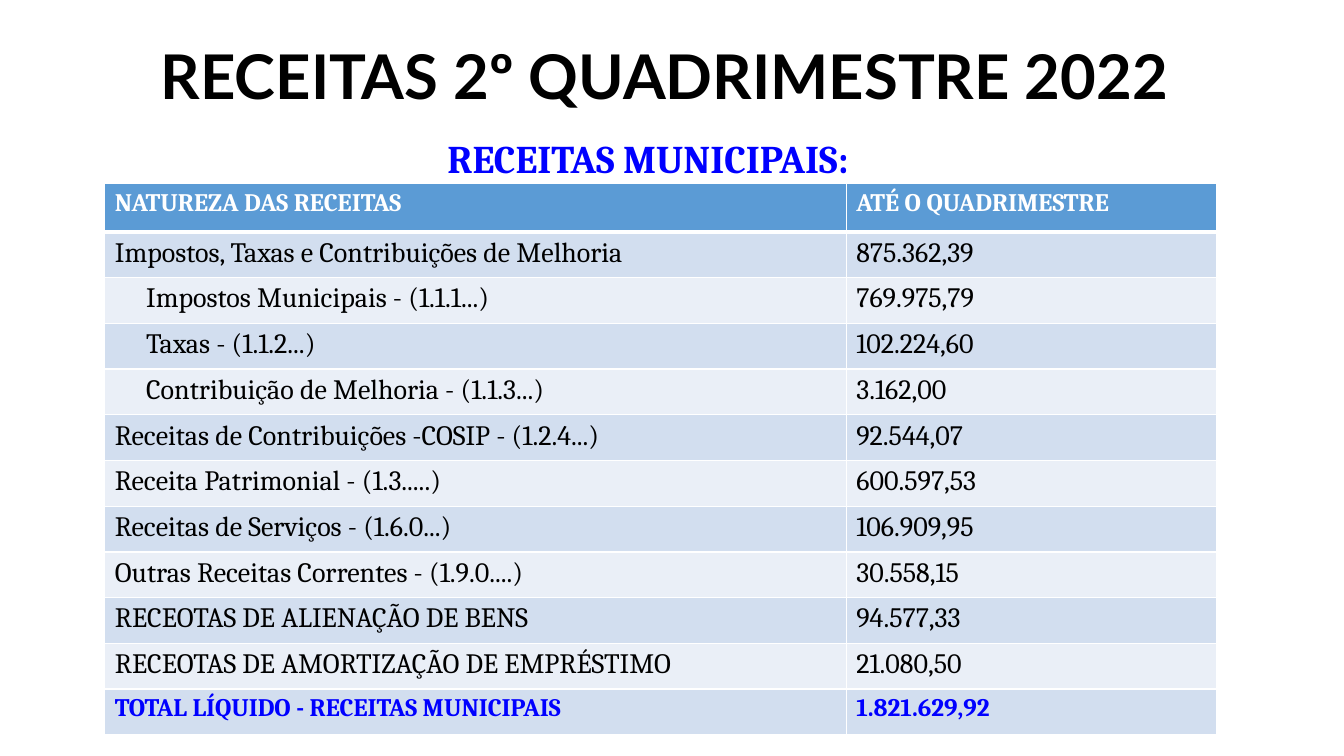
import pptx
import pptx.util
import pptx.dml.color
import pptx.enum.text
import pptx.oxml.ns
import lxml.etree

WIDTH, HEIGHT = pptx.util.Inches(13.33), pptx.util.Inches(7.5)
COLUMN, ROW = WIDTH / 100, HEIGHT / 100
WHITE, BLACK, BLUE = "FFFFFF", "000000", "0000FF"
HEADER_FILL, BANDS = "5B9BD5", ("D2DEEF", "EAEFF7")

TITLE = {"name": "Lato", "size": pptx.util.Pt(44), "bold": True}
SUBTITLE = {"name": "Cambria", "size": pptx.util.Pt(28), "bold": True}
STRONG = {"name": "Cambria", "size": pptx.util.Pt(18), "bold": True}
PLAIN = {"name": "Cambria", "size": pptx.util.Pt(20), "bold": False}

HEADINGS = ("NATUREZA DAS RECEITAS", "ATÉ O QUADRIMESTRE")
REVENUES = [
    ("Impostos, Taxas e Contribuições de Melhoria", "875.362,39"),
    ("Impostos Municipais - (1.1.1...)", "769.975,79"),
    ("Taxas - (1.1.2...)", "102.224,60"),
    ("Contribuição de Melhoria - (1.1.3...)", "3.162,00"),
    ("Receitas de Contribuições -COSIP - (1.2.4...)", "92.544,07"),
    ("Receita Patrimonial - (1.3.....)", "600.597,53"),
    ("Receitas de Serviços - (1.6.0...)", "106.909,95"),
    ("Outras Receitas Correntes - (1.9.0....)", "30.558,15"),
    ("RECEOTAS DE ALIENAÇÃO DE BENS", "94.577,33"),
    ("RECEOTAS DE AMORTIZAÇÃO DE EMPRÉSTIMO", "21.080,50"),
]
TOTAL = ("TOTAL LÍQUIDO - RECEITAS MUNICIPAIS", "1.821.629,92")
INDENTED_ROWS = (2, 3, 4)


def rgb(code):
    """Turn a hex string into a colour."""
    return pptx.dml.color.RGBColor.from_string(code)


def grid(left, top, width, height):
    """Turn columns and rows of the slide grid into lengths."""
    return (int(left * COLUMN), int(top * ROW), int(width * COLUMN), int(height * ROW))


def write(p, text, style, color):
    """Add one formatted run to a paragraph."""
    r = p.add_run()
    r.text = text
    for key, value in style.items():
        setattr(r.font, key, value)
    r.font.color.rgb = rgb(color)


def add_heading(s, box, text, style, color, anchor, space=0):
    """Place a centred line of text in the given box."""
    tf = s.shapes.add_textbox(*box).text_frame
    tf.word_wrap = True
    tf.vertical_anchor = anchor
    p = tf.paragraphs[0]
    layout = {"alignment": pptx.enum.text.PP_ALIGN.CENTER,
              "line_spacing": 0.9, "space_before": pptx.util.Pt(space)}
    for key, value in layout.items():
        setattr(p, key, value)
    write(p, text, style, color)


def add_borders(cell, top, bottom):
    """Draw white borders around a cell, with widths in points."""
    props = cell._tc.get_or_add_tcPr()
    for side, width in {"L": 1, "R": 1, "T": top, "B": bottom}.items():
        line = lxml.etree.SubElement(props, pptx.oxml.ns.qn("a:ln" + side),
                                     w=str(pptx.util.Pt(width)))
        fill = lxml.etree.SubElement(line, pptx.oxml.ns.qn("a:solidFill"))
        lxml.etree.SubElement(fill, pptx.oxml.ns.qn("a:srgbClr"), val=WHITE)


def add_revenue_table(s, box):
    """Place the banded revenue table in the given box."""
    rows = [HEADINGS, *REVENUES, TOTAL]
    last = len(rows) - 1
    table = s.shapes.add_table(len(rows), 2, *box).table
    for column, share in zip(table.columns, (2 / 3, 1 / 3)):
        column.width = int(box[2] * share)
    unit = box[3] / (last + 1.06)
    for i, values in enumerate(rows):
        table.rows[i].height = int(unit * (1.06 if i == 0 else 1))
        fill = HEADER_FILL if i == 0 else BANDS[(i - 1) % 2]
        color = {0: WHITE, last: BLUE}.get(i, BLACK)
        style = STRONG if i in (0, last) else PLAIN
        for j, text in enumerate(values):
            cell = table.cell(i, j)
            add_borders(cell, 3 if i == 1 else 1, 3 if i == 0 else 1)
            cell.fill.solid()
            cell.fill.fore_color.rgb = rgb(fill)
            if j == 0 and i in INDENTED_ROWS:
                cell.margin_left = pptx.util.Inches(0.41)
            write(cell.text_frame.paragraphs[0], text, style, color)


def main():
    """Build the slide and save it."""
    prs = pptx.Presentation()
    prs.slide_width, prs.slide_height = WIDTH, HEIGHT
    s = prs.slides.add_slide(prs.slide_layouts[6])
    anchors = pptx.enum.text.MSO_ANCHOR
    add_heading(s, grid(6.9, 3.07, 86.27, 14.8), "RECEITAS 2º QUADRIMESTRE 2022 ",
                TITLE, BLACK, anchors.MIDDLE)
    add_heading(s, grid(6.9, 17.87, 83.27, 8.27), "RECEITAS MUNICIPAIS: ",
                SUBTITLE, BLUE, anchors.TOP, 10)
    add_revenue_table(s, grid(7.8, 24.27, 82.75, 72.93))
    prs.save("out.pptx")


if __name__ == "__main__":
    main()
